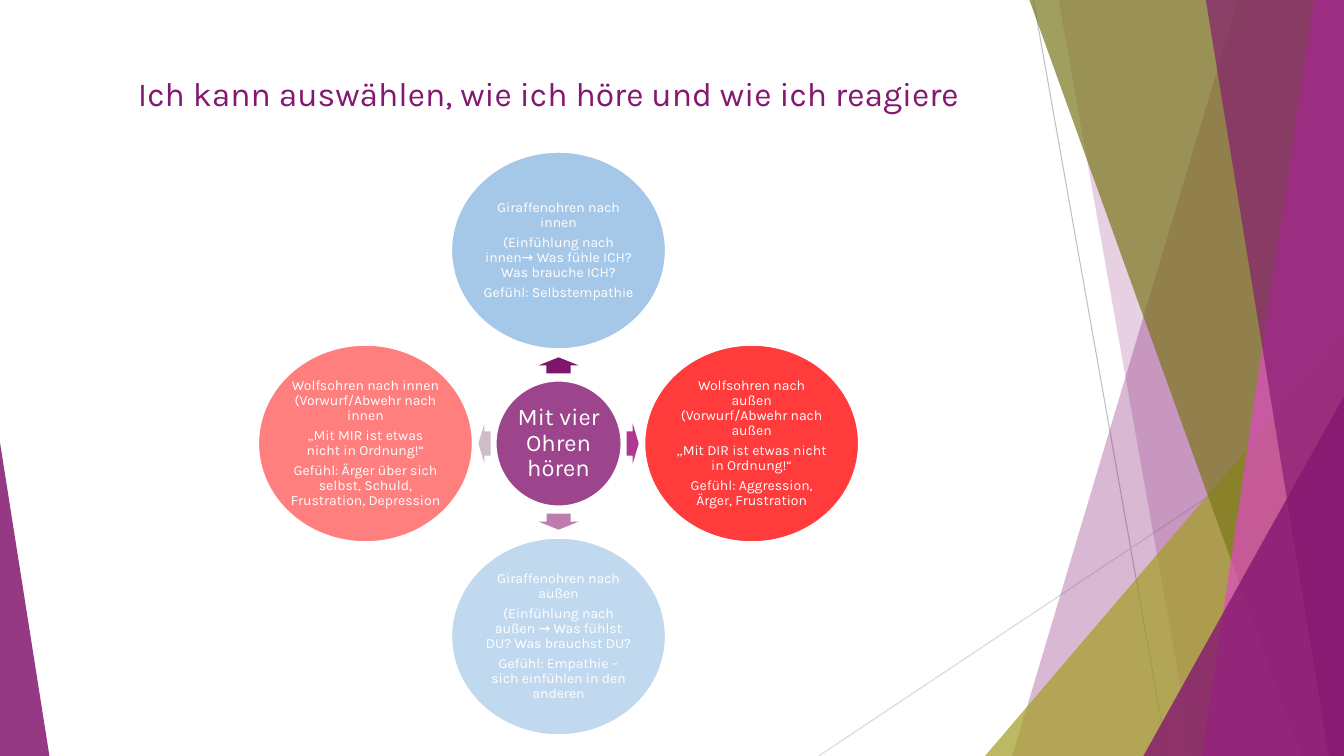
from pptx import Presentation
from pptx.util import Inches, Pt
from pptx.dml.color import RGBColor
from pptx.enum.shapes import MSO_CONNECTOR, MSO_SHAPE
from pptx.enum.text import MSO_ANCHOR, MSO_AUTO_SIZE, PP_ALIGN
from pptx.oxml.ns import qn
from lxml import etree

LINE = MSO_CONNECTOR.STRAIGHT
OVAL, ARROW, WEDGE = MSO_SHAPE.OVAL, MSO_SHAPE.RIGHT_ARROW, MSO_SHAPE.ISOSCELES_TRIANGLE
TOP, MIDDLE, CENTER = MSO_ANCHOR.TOP, MSO_ANCHOR.MIDDLE, PP_ALIGN.CENTER
WIDE, HIGH = 13.33, 7.5
PLUM, WHITE, FONT = "841770", "FFFFFF", "Karla"

TITLE = "Ich kann auswählen, wie ich höre und wie ich reagiere"
HUB = ["Mit vier Ohren hören"]
EARS = [
    (0, -1, "9DC3E6", 90, "7E166B", 270, [
        "Giraffenohren nach innen",
        "(Einfühlung nach innen→ Was fühle ICH? Was brauche ICH?",
        "Gefühl: Selbstempathie"]),
    (1, 0, "FF0000", 77, "AF3894", 0, [
        "Wolfsohren nach außen (Vorwurf/Abwehr nach außen",
        "„Mit DIR ist etwas nicht in Ordnung!“",
        "Gefühl: Aggression, Ärger, Frustration"]),
    (0, 1, "9DC3E6", 63, "BD7CAC", 90, [
        "Giraffenohren nach außen",
        "(Einfühlung nach außen → Was fühlst DU? Was brauchst DU?",
        "Gefühl: Empathie – sich einfühlen in den anderen"]),
    (-1, 0, "FF0000", 50, "CEBDC9", 180, [
        "Wolfsohren nach innen (Vorwurf/Abwehr nach innen",
        "„Mit MIR ist etwas nicht in Ordnung!“",
        "Gefühl: Ärger über sich selbst, Schuld, Frustration, Depression"]),
]
RAYS = [
    ((10.25, 0), (11.58, HIGH), "BFBFBF"),
    ((WIDE, 4.03), (8.12, HIGH), "D9D9D9"),
]
BANDS = [
    ("band", 12.28, 10.04, PLUM, 30),
    ("band", 10.5, 11.83, PLUM, 20),
    ("wedge", 9.77, 3.33, 3.56, 1, "A39E26", 72),
    ("band", 10.21, 12.91, "7A771C", 70),
    ("band", 13.03, 11.92, "DF4AC4", 70),
    ("band", 11.96, 13.18, PLUM, 65),
    ("wedge", 11.34, 3.93, 1.99, 1, PLUM, 80),
    ("wedge", 0, 4.39, 0.49, 0, PLUM, 85),
]
MID_X, MID_Y = 5.54, 4.4
REACH, GAP_X, GAP_Y = 1.915, 0.735, 0.775


def tint(code):
    return RGBColor.from_string(code)


def paint(shape, code, alpha=100, edge=None):
    shape.shadow.inherit = False
    shape.fill.solid()
    shape.fill.fore_color.rgb = tint(code)
    if alpha < 100:
        clr = shape.fill._xPr.find(qn("a:solidFill"))[0]
        etree.SubElement(clr, qn("a:alpha")).set("val", str(alpha * 1000))
    if edge:
        shape.line.color.rgb = tint(edge)
        shape.line.width = Pt(1.5)
    else:
        shape.line.fill.background()


def write(shape, lines, size, code, anchor, inset, space):
    frame = shape.text_frame
    form = {"word_wrap": True, "auto_size": MSO_AUTO_SIZE.NONE, "vertical_anchor": anchor}
    if inset is not None:
        for side in ("left", "right", "top", "bottom"):
            form["margin_" + side] = Inches(inset)
    for key, val in form.items():
        setattr(frame, key, val)
    frame.text = "\n".join(lines)
    for para in frame.paragraphs:
        look = {"alignment": CENTER, "line_spacing": space,
                "space_before": Pt(0), "space_after": Pt(size * 0.35)}
        for key, val in look.items():
            setattr(para, key, val)
        font = para.runs[0].font
        for key, val in {"name": FONT, "size": Pt(size), "bold": False}.items():
            setattr(font, key, val)
        font.color.rgb = tint(code)


def centred(shapes, kind, x, y, w, h):
    return shapes.add_shape(kind, *map(Inches, (x - w / 2, y - h / 2, w, h)))


def backdrop(shapes):
    for start, end, code in RAYS:
        ray = shapes.add_connector(LINE, *map(Inches, start + end))
        ray.line.color.rgb = tint(code)
        ray.line.width = Pt(0.75)
        etree.SubElement(ray._element.spPr, qn("a:effectLst"))
    for kind, *data, code, alpha in BANDS:
        if kind == "band":
            head, foot = data
            pen = shapes.build_freeform(Inches(head), 0)
            pen.add_line_segments([(Inches(x), Inches(y)) for x, y in
                                   ((WIDE, 0), (WIDE, HIGH), (foot, HIGH))], close=True)
            part = pen.convert_to_shape()
        else:
            x, y, w, tip = data
            part = shapes.add_shape(WEDGE, *map(Inches, (x, y, w, HIGH - y)))
            part.adjustments[0] = tip
        paint(part, code, alpha)


def wheel(shapes):
    hub = centred(shapes, OVAL, MID_X, MID_Y, 1.25, 1.25)
    paint(hub, PLUM, 80, WHITE)
    write(hub, HUB, 17, WHITE, MIDDLE, 0.02, 0.9)
    for dx, dy, code, alpha, dark, turn, lines in EARS:
        long = 0.16 if dy else 0.12
        arrow = centred(shapes, ARROW, MID_X + dx * GAP_X, MID_Y + dy * GAP_Y, long, 0.4)
        arrow.adjustments[0] = 0.6
        arrow.rotation = turn
        paint(arrow, dark)
        ear = centred(shapes, OVAL, MID_X + dx * REACH, MID_Y + dy * REACH, 2.13, 1.96)
        paint(ear, code, alpha, WHITE)
        write(ear, lines, 10, WHITE, MIDDLE, 0.01, 0.9)


def main():
    deck = Presentation()
    deck.slide_width, deck.slide_height = Inches(WIDE), Inches(HIGH)
    slide = deck.slides.add_slide(deck.slide_layouts[5])
    backdrop(slide.shapes)
    title = slide.shapes.title
    box = {"left": 0.74, "top": 0.67, "width": 9.4, "height": 1.03}
    for key, val in box.items():
        setattr(title, key, Inches(val))
    write(title, [TITLE], 24, PLUM, TOP, None, 1.0)
    wheel(slide.shapes)
    deck.save("out.pptx")


if __name__ == "__main__":
    main()
